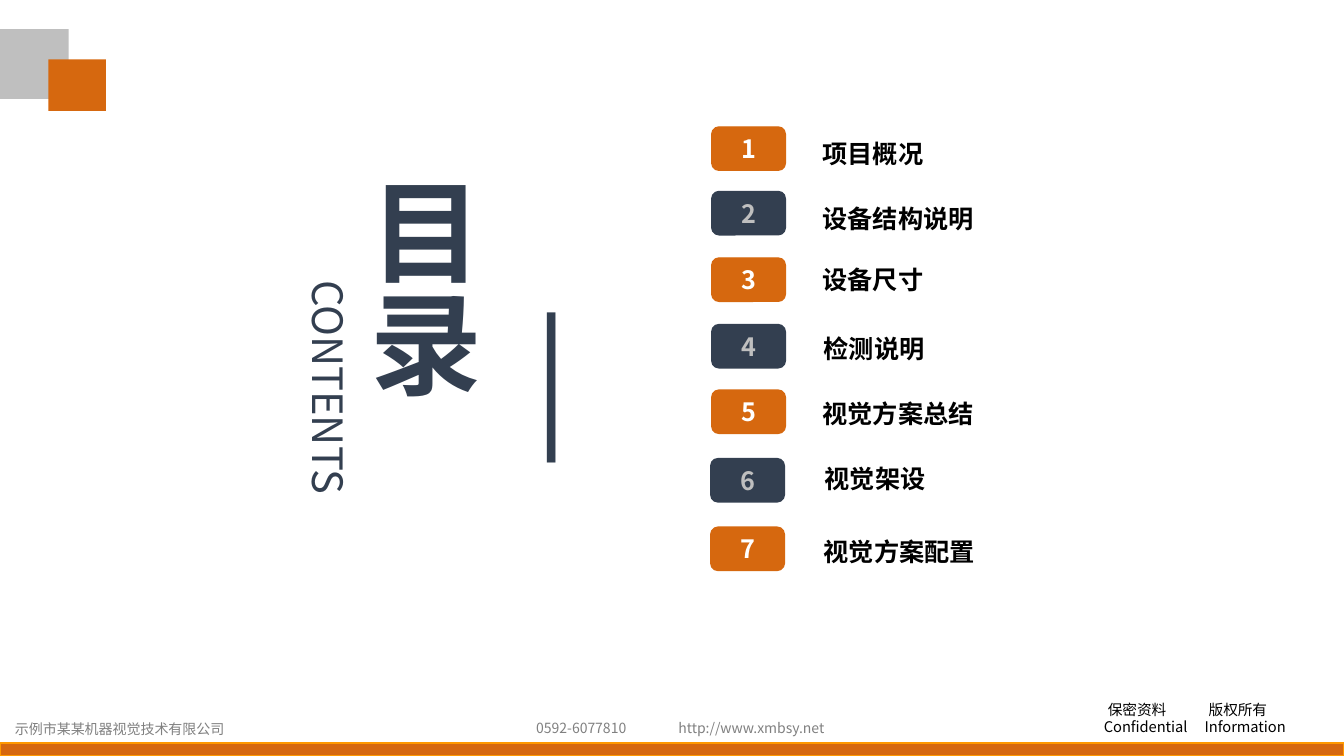
from lxml import etree
from pptx import Presentation
from pptx import util as u
from pptx.dml.color import RGBColor
from pptx.enum import shapes, text
from pptx.oxml.ns import qn

FONT = "Noto Sans CJK SC"
COLORS = {"orange": "D6680F", "amber": "FF9900", "navy": "333F50", "silver": "BFBFBF",
          "gray": "808080", "white": "FFFFFF", "black": "000000"}
BADGE_SIZE = (0.73, 0.43)
AGENDA = [
    ("项目概况", (0, 0), (1, 0.06)),
    ("设备结构说明", (0, 0.64), (1, 0.71)),
    ("设备尺寸", (0, 1.3), (1, 1.31)),
    ("检测说明", (0, 1.96), (1.01, 2)),
    ("视觉方案总结", (0, 2.61), (1, 2.64)),
    ("视觉架设", (-0.01, 3.29), (1.02, 3.29)),
    ("视觉方案配置", (-0.01, 3.97), (1.01, 4.01)),
]


def color(name):
    return RGBColor.from_string(COLORS[name])


def write(shape, content, size, ink, bold=False, align=text.PP_ALIGN.LEFT):
    frame = shape.text_frame
    frame.text = content
    for paragraph in frame.paragraphs:
        paragraph.alignment = align
        for run in paragraph.runs:
            run.font.name = FONT
            run.font.size = u.Pt(size)
            run.font.bold = bold
            run.font.color.rgb = color(ink)
            east_asian = etree.SubElement(run.font._element, qn("a:ea"))
            east_asian.set("typeface", FONT)


def add_block(slide, box, fill, line=None, kind=shapes.MSO_SHAPE.RECTANGLE):
    shape = slide.shapes.add_shape(kind, *map(u.Inches, box))
    shape.shadow.inherit = False
    shape.fill.solid()
    shape.fill.fore_color.rgb = color(fill)
    if line:
        shape.line.color.rgb = color(line)
        shape.line.width = u.Pt(1)
    else:
        shape.line.fill.background()
    return shape


def add_text(slide, box, content, size, ink, wrap=True, **style):
    shape = slide.shapes.add_textbox(*map(u.Inches, box))
    shape.text_frame.word_wrap = wrap
    shape.text_frame.auto_size = text.MSO_AUTO_SIZE.SHAPE_TO_FIT_TEXT
    write(shape, content, size, ink, **style)
    return shape


def clear_margins(frame):
    frame.margin_left = frame.margin_right = frame.margin_top = frame.margin_bottom = 0


def add_corner(slide, left, top):
    add_block(slide, (left, top, 0.69, 0.69), "silver")
    add_block(slide, (left + 0.49, top + 0.3, 0.57, 0.51), "orange")


def add_title(slide, left, top):
    heading = add_block(slide, (left + 1.96, top, 1.34, 3.92), "white")
    frame = heading.text_frame
    frame.word_wrap = True
    frame.auto_size = text.MSO_AUTO_SIZE.SHAPE_TO_FIT_TEXT
    frame.vertical_anchor = text.MSO_ANCHOR.MIDDLE
    clear_margins(frame)
    frame._txBody.bodyPr.set("vert", "eaVert")
    write(heading, "目录", 79.9, "navy", True, text.PP_ALIGN.CENTER)

    subtitle = add_text(slide, (left, top + 1.84, 3.41, 0.5), "CONTENTS", 29.8, "navy",
                        align=text.PP_ALIGN.CENTER)
    clear_margins(subtitle.text_frame)
    subtitle.rotation = 90
    add_text(slide, (left + 3.63, top + 1.09, 0.51, 1.72), "|", 96, "navy", wrap=False)


def add_agenda(slide, left, top):
    for number, (label, badge_offset, label_offset) in enumerate(AGENDA, 1):
        fill, ink = ("orange", "white") if number % 2 else ("navy", "silver")
        badge_box = (left + badge_offset[0], top + badge_offset[1], *BADGE_SIZE)
        badge = add_block(slide, badge_box, fill, fill, shapes.MSO_SHAPE.ROUNDED_RECTANGLE)
        badge.text_frame.vertical_anchor = text.MSO_ANCHOR.MIDDLE
        write(badge, str(number), 18, ink, True, text.PP_ALIGN.CENTER)
        label_box = (left + label_offset[0], top + label_offset[1], 2.12, 0.4)
        add_text(slide, label_box, label, 18, "black", bold=True)


def add_footer(slide, left, top, width):
    add_block(slide, (left, top + 0.47, width, 0.13), "orange", "amber")
    notice = add_text(slide, (left + 10.85, top, 2.17, 0.45),
                      "保密资料\t版权所有\nConfidential\tInformation", 10.5, "black")
    for paragraph, indent, stop in zip(notice.text_frame.paragraphs, (0.04, 0), (0.81, 0.89)):
        properties = paragraph._p.get_or_add_pPr()
        properties.set("marL", str(u.Inches(indent)))
        properties.set("indent", "0")
        tabs = etree.SubElement(properties, qn("a:tabLst"))
        etree.SubElement(tabs, qn("a:tab"), pos=str(u.Inches(stop)), algn="l")
    for offset, drop, span, content in [
        (0.05, 0.2, 2.35, "示例市某某机器视觉技术有限公司"),
        (5.22, 0.19, 1.1, "0592-6077810"),
        (6.63, 0.19, 1.67, "http://www.xmbsy.net"),
    ]:
        add_text(slide, (left + offset, top + drop, span, 0.27), content, 10, "gray")


def main():
    presentation = Presentation()
    presentation.slide_width = u.Inches(13.33)
    presentation.slide_height = u.Inches(7.5)
    slide = presentation.slides.add_slide(presentation.slide_layouts[6])
    add_footer(slide, 0, 6.9, 13.33)
    add_corner(slide, -0.01, 0.29)
    add_title(slide, 1.56, 1.75)
    add_agenda(slide, 7.06, 1.26)
    presentation.save("out.pptx")


if __name__ == "__main__":
    main()
